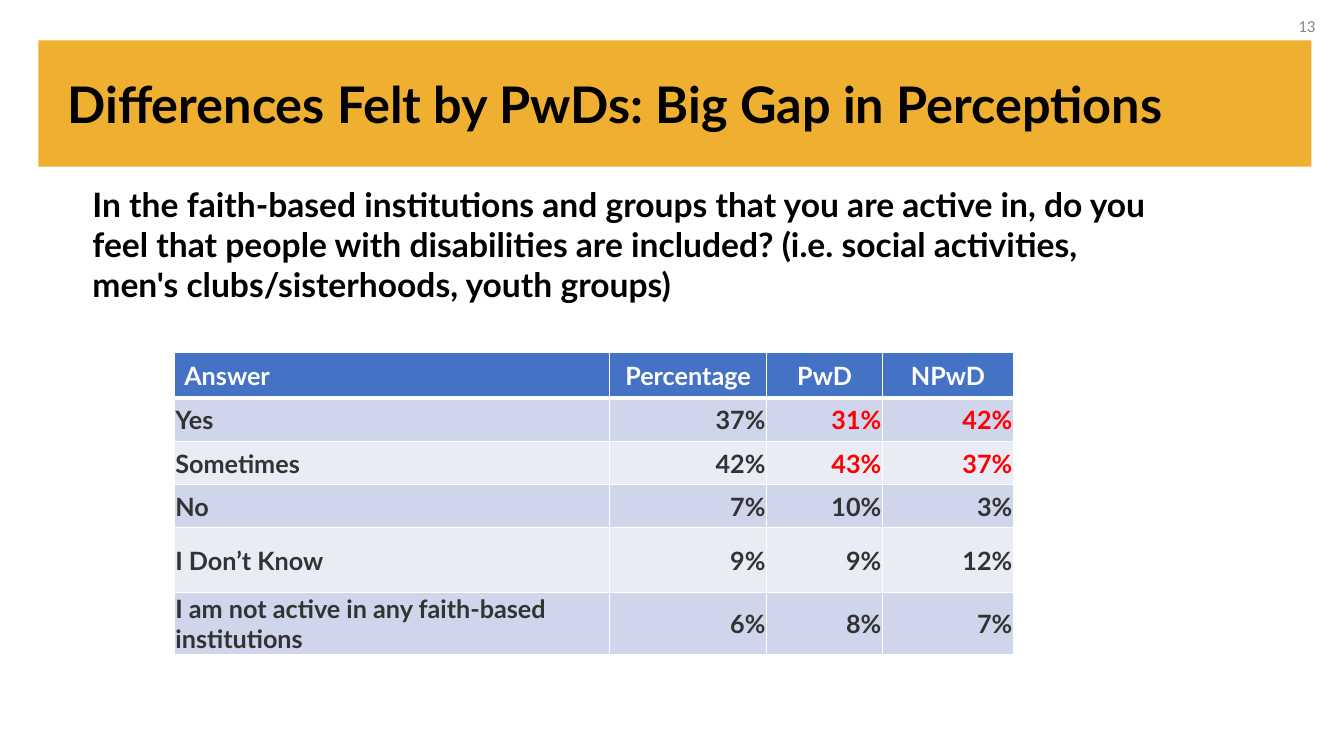
from lxml.etree import SubElement
from pptx import Presentation
from pptx.dml.color import RGBColor
from pptx.enum.shapes import MSO_SHAPE
from pptx.enum.text import MSO_ANCHOR, PP_ALIGN
from pptx.oxml.ns import qn
from pptx.util import Cm, Pt

GOLD = RGBColor(0xEF, 0xAF, 0x30)
BLUE = RGBColor(0x44, 0x72, 0xC4)
DARK = RGBColor(0xCF, 0xD5, 0xEA)
PALE = RGBColor(0xE9, 0xEB, 0xF5)
RED = RGBColor(0xFF, 0x00, 0x00)
INK = RGBColor(0x33, 0x33, 0x33)
GREY = RGBColor(0x88, 0x88, 0x88)
BLACK = RGBColor(0x00, 0x00, 0x00)
WHITE = RGBColor(0xFF, 0xFF, 0xFF)

TITLE = "Differences Felt by PwDs: Big Gap in Perceptions"
QUERY = (
    "In the faith-based institutions and groups that you are active in, "
    "do you feel that people with disabilities are included? "
    "(i.e. social activities, men's clubs/sisterhoods, youth groups)"
)
ROWS = [
    ("Answer", "Percentage", "PwD", "NPwD"),
    ("Yes", "37%", "31%", "42%"),
    ("Sometimes", "42%", "43%", "37%"),
    ("No", "7%", "10%", "3%"),
    ("I Don’t Know", "9%", "9%", "12%"),
    ("I am not active in any faith-based institutions", "6%", "8%", "7%"),
]
WIDTHS = (10.97, 3.96, 2.92, 3.3)
HEIGHTS = (1.14, 1.09, 1.09, 1.09, 1.63, 1.53)


def style(frame, size, color, align=PP_ALIGN.LEFT, face="Lato", bold=True):
    """Format the first paragraph of a text frame."""
    para = frame.paragraphs[0]
    para.alignment = align
    font = para.runs[0].font
    font.name, font.size, font.bold = face, Pt(size), bold
    font.color.rgb = color


def add_band(slide, left, top, width, height):
    """Draw the gold band behind the title."""
    band = slide.shapes.add_shape(
        MSO_SHAPE.RECTANGLE, Cm(left), Cm(top), Cm(width), Cm(height))
    band.shadow.inherit = False
    band.fill.solid()
    band.fill.fore_color.rgb = GOLD
    band.line.fill.background()


def add_text(slide, text, left, top, width, height, anchor=MSO_ANCHOR.MIDDLE):
    """Add a wrapped text box and return its frame."""
    box = slide.shapes.add_textbox(Cm(left), Cm(top), Cm(width), Cm(height))
    frame = box.text_frame
    frame.word_wrap = True
    frame.vertical_anchor = anchor
    frame.text = text
    return frame


def set_edges(cell, top, base):
    """Give a cell white borders of the given top and bottom widths."""
    props = cell._tc.get_or_add_tcPr()
    edges = (("a:lnL", 1), ("a:lnR", 1), ("a:lnT", top), ("a:lnB", base))
    for spot, (tag, width) in enumerate(edges):
        line = SubElement(props, qn(tag), w=str(Pt(width)))
        fill = SubElement(line, qn("a:solidFill"))
        SubElement(fill, qn("a:srgbClr"), val=str(WHITE))
        props.insert(spot, line)


def fill_cell(cell, text, row, col):
    """Write and format one cell by its place in the table."""
    head = row == 0
    cell.text = text
    cell.vertical_anchor = MSO_ANCHOR.MIDDLE
    if not head:
        cell.margin_left = cell.margin_right = cell.margin_top = Cm(0.03)
        cell.margin_bottom = Cm(0)
    cell.fill.solid()
    cell.fill.fore_color.rgb = BLUE if head else DARK if row % 2 else PALE
    hot = row in (1, 2) and col > 1
    color = WHITE if head else RED if hot else INK
    align = PP_ALIGN.CENTER if head else PP_ALIGN.RIGHT
    style(cell.text_frame, 18, color, align if col else PP_ALIGN.LEFT)
    set_edges(cell, 3 if row == 1 else 1, 3 if head else 1)


def add_grid(slide, left, top):
    """Add the table of answers."""
    table = slide.shapes.add_table(
        len(ROWS), len(WIDTHS), Cm(left), Cm(top),
        Cm(sum(WIDTHS)), Cm(sum(HEIGHTS))).table
    for col, width in zip(table.columns, WIDTHS):
        col.width = Cm(width)
    for row, height in zip(table.rows, HEIGHTS):
        row.height = Cm(height)
    for row, texts in enumerate(ROWS):
        for col, text in enumerate(texts):
            fill_cell(table.cell(row, col), text, row, col)


def main():
    """Build the slide and save it."""
    deck = Presentation()
    deck.slide_width, deck.slide_height = Cm(33.87), Cm(19.05)
    slide = deck.slides.add_slide(deck.slide_layouts[6])
    add_band(slide, 0.97, 1.02, 32.08, 3.18)
    style(add_text(slide, TITLE, 1.45, 1.02, 29.51, 3.18), 36, BLACK)
    query = add_text(slide, QUERY, 2.08, 4.5, 27.53, 3.33, MSO_ANCHOR.TOP)
    style(query, 24, BLACK)
    add_grid(slide, 4.39, 8.89)
    number = add_text(slide, "13", 25.78, 0.13, 7.62, 1.02)
    style(number, 12, GREY, PP_ALIGN.RIGHT, "Calibri", False)
    deck.save("out.pptx")


if __name__ == "__main__":
    main()
